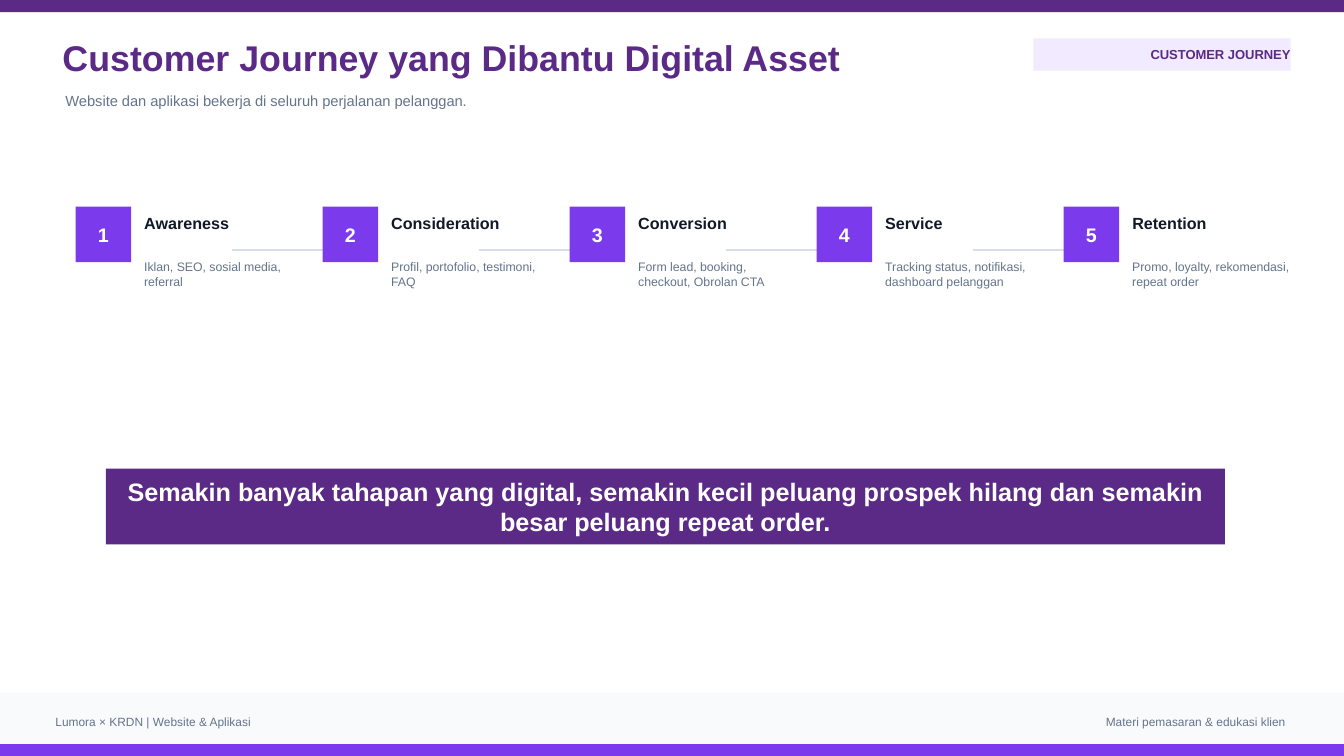
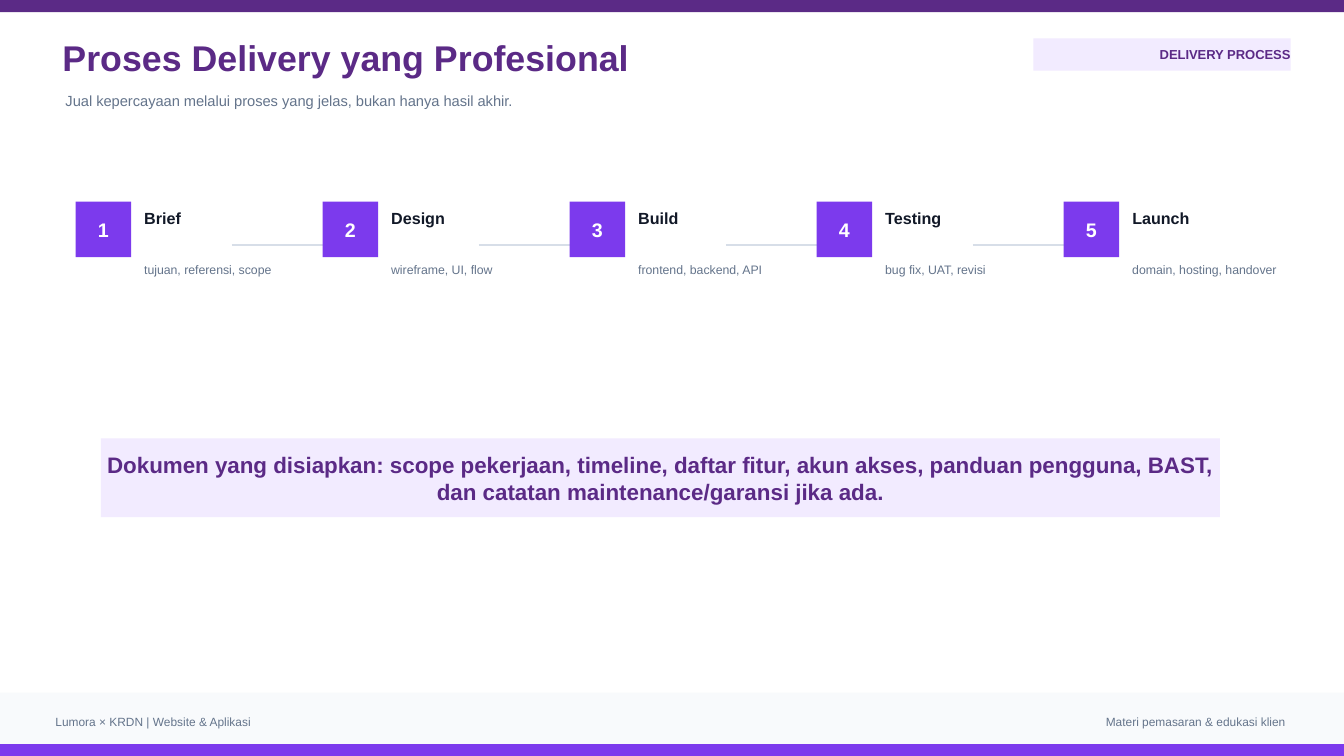
from lxml import etree
from pptx import Presentation
from pptx.dml.color import RGBColor
from pptx.enum import shapes, text
from pptx.oxml.ns import qn
from pptx.util import Inches, Pt

FONT = "Arial"
PURPLE = RGBColor(0x5B, 0x2A, 0x86)
VIOLET = RGBColor(0x7C, 0x3A, 0xED)
LAVENDER = RGBColor(0xF2, 0xEB, 0xFF)
MIST = RGBColor(0xF8, 0xFA, 0xFC)
LINE_GRAY = RGBColor(0xD7, 0xDE, 0xE8)
SLATE = RGBColor(0x64, 0x74, 0x8B)
INK = RGBColor(0x11, 0x18, 0x27)
WHITE = RGBColor(0xFF, 0xFF, 0xFF)

LEFT, CENTER, RIGHT = text.PP_ALIGN.LEFT, text.PP_ALIGN.CENTER, text.PP_ALIGN.RIGHT

SLIDE_WIDTH, SLIDE_HEIGHT = 13.33, 7.5
BAND_HEIGHT = 0.12
FOOTER_TOP = 6.87
STEP_LEFT, STEP_PITCH, STEP_SIZE = 0.75, 2.45, 0.55

FOOTER_LEFT = "Lumora × KRDN | Website & Aplikasi"
FOOTER_RIGHT = "Materi pemasaran & edukasi klien"

SLIDES = [
    {
        "title": "Customer Journey yang Dibantu Digital Asset",
        "subtitle": "Website dan aplikasi bekerja di seluruh perjalanan pelanggan.",
        "tag": "CUSTOMER JOURNEY",
        "steps_top": 2.05,
        "steps": [
            ("Awareness", "Iklan, SEO, sosial media, referral"),
            ("Consideration", "Profil, portofolio, testimoni, FAQ"),
            ("Conversion", "Form lead, booking, checkout, Obrolan CTA"),
            ("Service", "Tracking status, notifikasi, dashboard pelanggan"),
            ("Retention", "Promo, loyalty, rekomendasi, repeat order"),
        ],
        "message": "Semakin banyak tahapan yang digital, semakin kecil peluang prospek "
                   "hilang dan semakin besar peluang repeat order.",
        "message_box": (1.05, 4.65, 11.1, 0.75),
        "message_style": (18, WHITE, PURPLE),
    },
    {
        "title": "Proses Delivery yang Profesional",
        "subtitle": "Jual kepercayaan melalui proses yang jelas, bukan hanya hasil akhir.",
        "tag": "DELIVERY PROCESS",
        "steps_top": 2.0,
        "steps": [
            ("Brief", "tujuan, referensi, scope"),
            ("Design", "wireframe, UI, flow"),
            ("Build", "frontend, backend, API"),
            ("Testing", "bug fix, UAT, revisi"),
            ("Launch", "domain, hosting, handover"),
        ],
        "message": "Dokumen yang disiapkan: scope pekerjaan, timeline, daftar fitur, akun "
                   "akses, panduan pengguna, BAST, dan catatan maintenance/garansi jika ada.",
        "message_box": (1.0, 4.35, 11.1, 0.78),
        "message_style": (16, PURPLE, LAVENDER),
    },
]


def write(shape, words, size, color, bold=False, align=LEFT):
    frame = shape.text_frame
    frame.word_wrap = True
    frame.vertical_anchor = text.MSO_ANCHOR.MIDDLE
    frame.margin_left = frame.margin_right = frame.margin_top = frame.margin_bottom = 0
    paragraph = frame.paragraphs[0]
    paragraph.alignment = align
    run = paragraph.add_run()
    run.text = words
    run.font.name = FONT
    run.font.size = Pt(size)
    run.font.bold = bold
    run.font.color.rgb = color


def add_text(slide, box, *style, **options):
    write(slide.shapes.add_textbox(*map(Inches, box)), *style, **options)


def add_block(slide, box, fill):
    shape = slide.shapes.add_shape(shapes.MSO_SHAPE.RECTANGLE, *map(Inches, box))
    shape.shadow.inherit = False
    shape.fill.solid()
    shape.fill.fore_color.rgb = fill
    shape.line.fill.background()
    return shape


def add_arrow(slide, left, right, y):
    arrow = slide.shapes.add_connector(
        shapes.MSO_CONNECTOR.STRAIGHT, Inches(left), Inches(y), Inches(right), Inches(y))
    arrow.line.color.rgb = LINE_GRAY
    arrow.line.width = Pt(1.4)
    etree.SubElement(arrow.line._get_or_add_ln(), qn("a:tailEnd"), type="triangle")
    etree.SubElement(arrow._element.spPr, qn("a:effectLst"))


def add_frame(slide, content):
    """Draw the bands, footer and heading common to every slide."""
    bottom_band = SLIDE_HEIGHT - BAND_HEIGHT
    add_block(slide, (0, 0, SLIDE_WIDTH, BAND_HEIGHT), PURPLE)
    add_block(slide, (0, bottom_band, SLIDE_WIDTH, BAND_HEIGHT), VIOLET)
    add_block(slide, (0, FOOTER_TOP, SLIDE_WIDTH, bottom_band - FOOTER_TOP), MIST)
    add_text(slide, (0.55, 7.07, 5.6, 0.18), FOOTER_LEFT, 8.5, SLATE)
    add_text(slide, (8.45, 7.07, 4.3, 0.18), FOOTER_RIGHT, 8.5, SLATE, align=RIGHT)
    add_text(slide, (0.62, 0.36, 9.4, 0.42), content["title"], 25.5, PURPLE, bold=True)
    add_text(slide, (0.65, 0.86, 10.2, 0.28), content["subtitle"], 10.5, SLATE)
    tag = add_block(slide, (10.25, 0.38, 2.55, 0.32), LAVENDER)
    write(tag, content["tag"], 9.3, PURPLE, bold=True, align=RIGHT)


def add_steps(slide, steps, top):
    lefts = [STEP_LEFT + index * STEP_PITCH for index in range(len(steps))]
    for left in lefts[:-1]:
        add_arrow(slide, left + 1.55, left + 2.55, top + 0.43)
    for number, (left, (name, detail)) in enumerate(zip(lefts, steps), start=1):
        square = add_block(slide, (left, top, STEP_SIZE, STEP_SIZE), VIOLET)
        write(square, str(number), 14, WHITE, bold=True, align=CENTER)
        text_left = left + 0.68
        add_text(slide, (text_left, top + 0.02, 1.45, 0.28), name, 11.5, INK, bold=True)
        add_text(slide, (text_left, top + 0.38, 1.56, 0.58), detail, 8.8, SLATE)


def main():
    presentation = Presentation()
    presentation.slide_width = Inches(SLIDE_WIDTH)
    presentation.slide_height = Inches(SLIDE_HEIGHT)
    for content in SLIDES:
        slide = presentation.slides.add_slide(presentation.slide_layouts[6])
        add_frame(slide, content)
        add_steps(slide, content["steps"], content["steps_top"])
        size, color, fill = content["message_style"]
        message = add_block(slide, content["message_box"], fill)
        write(message, content["message"], size, color, bold=True, align=CENTER)
    presentation.save("out.pptx")


if __name__ == "__main__":
    main()
